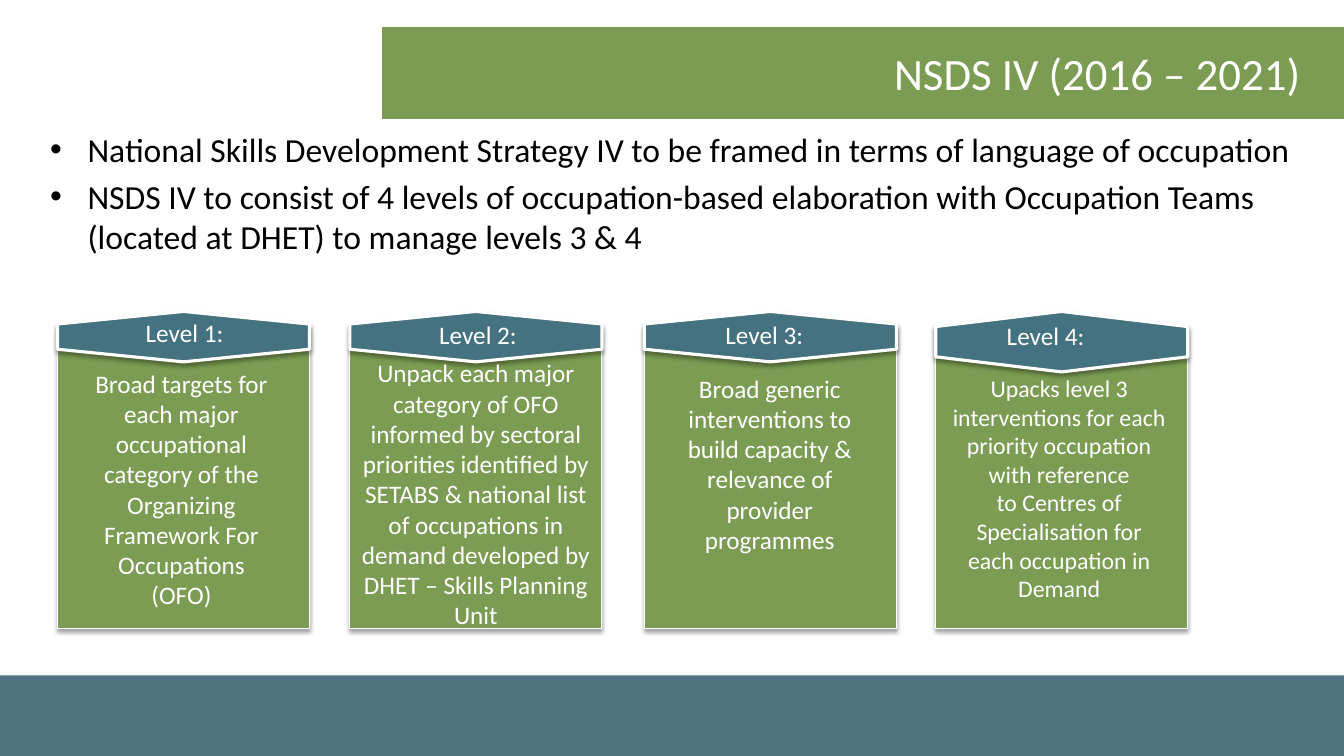
from lxml import etree
from pptx import Presentation
from pptx.dml.color import RGBColor
from pptx.enum.shapes import MSO_SHAPE
from pptx.enum.text import MSO_ANCHOR, PP_ALIGN
from pptx.oxml import parse_xml
from pptx.oxml.ns import nsdecls, qn
from pptx.util import Inches, Pt

FONT = "Calibri"
WHITE = RGBColor(0xFF, 0xFF, 0xFF)
BLACK = RGBColor(0x00, 0x00, 0x00)
GREEN = RGBColor(0x7B, 0x9C, 0x52)
TEAL = RGBColor(0x44, 0x72, 0x80)
SLATE = RGBColor(0x4F, 0x73, 0x7F)

PANEL_TOP, PANEL_WIDTH, PANEL_HEIGHT = 3.24, 2.5, 3
CAP_TOP = 3.09

BULLETS = [
    "National Skills Development Strategy IV to be framed in terms of language of occupation",
    "NSDS IV to consist of 4 levels of occupation-based elaboration with "
    "Occupation Teams (located at DHET) to manage levels 3 & 4",
]

# Panel left, cap height, label position, text box, text size, paragraphs
LEVELS = [
    (0.57, 0.5, (1.34, 3.1), (0.78, 3.6, 2.04, 2.52), 18,
     ["Broad targets for each major occupational category of the "
      "Organizing Framework For Occupations (OFO)"]),
    (3.47, 0.5, (4.25, 3.12), (3.47, 3.5, 2.5, 2.83), 18,
     ["Unpack each major category of OFO informed by sectoral priorities "
      "identified by SETABS & national list of occupations in demand "
      "developed by DHET – Skills Planning Unit"]),
    (6.39, 0.5, (7.09, 3.12), (6.55, 3.65, 2.17, 1.92), 18,
     ["Broad generic interventions to build capacity & relevance of "
      "provider programmes"]),
    (9.28, 0.6, (9.88, 3.13), (9.34, 3.66, 2.33, 2.39), 17,
     ["Upacks level 3 interventions for each priority occupation with reference",
      "to Centres of Specialisation for each occupation in Demand"]),
]


def add_soft_shadow(shape):
    shape._element.spPr.append(parse_xml(
        f'<a:effectLst {nsdecls("a")}>'
        f'<a:outerShdw blurRad="{Pt(3.1)}" dist="{Pt(1.8)}" dir="5400000" rotWithShape="0">'
        '<a:srgbClr val="000000"><a:alpha val="35000"/></a:srgbClr>'
        '</a:outerShdw></a:effectLst>'))


def add_block(slide, kind, box, fill, line_width=None, shadow=True):
    shape = slide.shapes.add_shape(kind, *map(Inches, box))
    shape.fill.solid()
    shape.fill.fore_color.rgb = fill
    if line_width:
        shape.line.color.rgb = WHITE
        shape.line.width = Pt(line_width)
    else:
        shape.line.fill.background()
    if shadow:
        add_soft_shadow(shape)
    else:
        shape.shadow.inherit = False
    return shape


def format_paragraph(paragraph, size, color, alignment):
    paragraph.alignment = alignment
    for run in paragraph.runs:
        run.font.name = FONT
        run.font.size = Pt(size)
        run.font.color.rgb = color


def add_text(slide, box, texts, size, color=WHITE, alignment=PP_ALIGN.CENTER, wrap=True):
    text_frame = slide.shapes.add_textbox(*map(Inches, box)).text_frame
    text_frame.word_wrap = wrap
    text_frame.text = "\n".join(texts)
    for paragraph in text_frame.paragraphs:
        format_paragraph(paragraph, size, color, alignment)
    return text_frame


def add_bullets(slide):
    text_frame = add_text(slide, (0.4, 1.23, 12.6, 1.68), BULLETS, 24, BLACK, PP_ALIGN.LEFT)
    for index, paragraph in enumerate(text_frame.paragraphs):
        if index:
            paragraph.space_before = Pt(4.8)
        properties = paragraph._p.get_or_add_pPr()
        properties.set("marL", str(Inches(0.37)))
        properties.set("indent", str(-Inches(0.37)))
        etree.SubElement(properties, qn("a:buFont")).set("typeface", "Arial")
        etree.SubElement(properties, qn("a:buChar")).set("char", "•")


def add_level(slide, number, left, cap_height, label_position, text_box, size, texts):
    add_block(slide, MSO_SHAPE.RECTANGLE,
              (left, PANEL_TOP, PANEL_WIDTH, PANEL_HEIGHT), GREEN, 0.75)
    # The hexagon stands upright and is turned to lie across the panel
    cap_box = (left + (PANEL_WIDTH - cap_height) / 2,
               CAP_TOP + (cap_height - PANEL_WIDTH) / 2, cap_height, PANEL_WIDTH)
    cap = add_block(slide, MSO_SHAPE.HEXAGON, cap_box, TEAL, 2.25)
    cap.rotation = 90
    add_text(slide, text_box, texts, size)
    add_text(slide, (*label_position, 0.98, 0.4), [f"Level {number}:"], 18, wrap=False)


def set_title(slide, text):
    title = slide.shapes.title
    title.left, title.top, title.width, title.height = map(Inches, (1, 0.09, 12, 1.25))
    title.text_frame.text = text
    title.text_frame.vertical_anchor = MSO_ANCHOR.MIDDLE
    format_paragraph(title.text_frame.paragraphs[0], 32, WHITE, PP_ALIGN.RIGHT)
    # Bring the title in front of its banner
    slide.shapes._spTree.append(title._element)


def main():
    presentation = Presentation()
    presentation.slide_width = Inches(13.33)
    presentation.slide_height = Inches(7.5)
    slide = presentation.slides.add_slide(presentation.slide_layouts[5])

    # Footer band and title banner
    add_block(slide, MSO_SHAPE.RECTANGLE, (0, 6.7, 13.33, 0.8), SLATE)
    add_block(slide, MSO_SHAPE.RECTANGLE, (3.79, 0.27, 9.54, 0.91), GREEN, shadow=False)
    set_title(slide, "NSDS IV (2016 – 2021)")

    # Introduction and the four levels
    add_bullets(slide)
    for number, level in enumerate(LEVELS, start=1):
        add_level(slide, number, *level)

    presentation.save("out.pptx")


if __name__ == "__main__":
    main()
